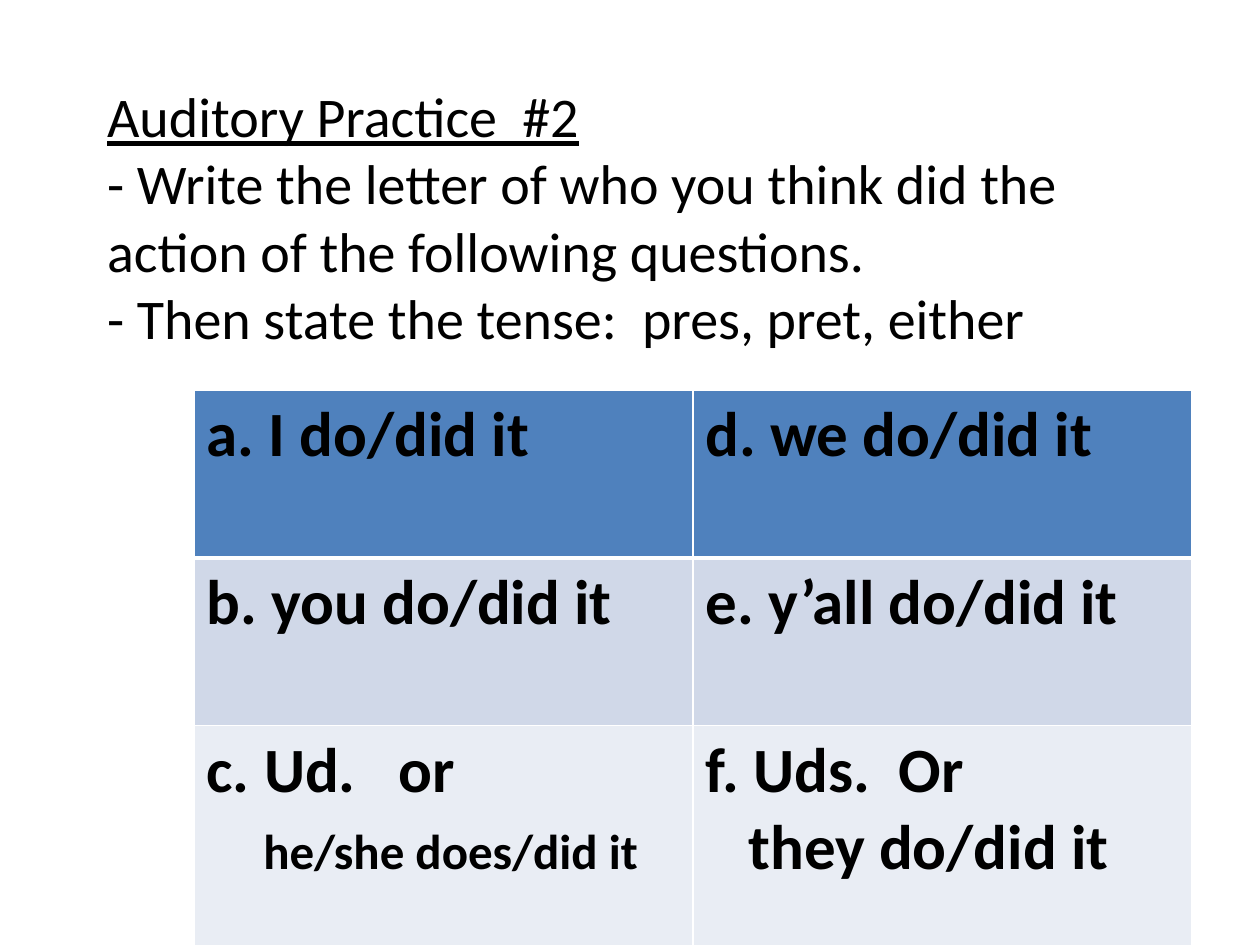
from lxml import etree
from pptx import Presentation
from pptx.dml.color import RGBColor
from pptx.enum.text import MSO_ANCHOR, MSO_AUTO_SIZE, PP_ALIGN
from pptx.oxml.ns import qn
from pptx.util import Inches, Pt

MIDDLE = MSO_ANCHOR.MIDDLE
LEFT = PP_ALIGN.LEFT
NO_FIT = MSO_AUTO_SIZE.NONE
FONT = "Calibri"
COLORS = {"text": "000000", "line": "FFFFFF", "head": "4F81BD",
          "band": "D0D8E8", "pale": "E9EDF4"}

TITLE = [
    "Auditory Practice  #2",
    "- Write the letter of who you think did the action of the following questions.",
    "- Then state the tense:  pres, pret, either",
]
# Each row: fill, height, cells; each cell line: text, size, indent
ROWS = [
    ("head", 1.33, [[("a. I do/did it", 36, 0)],
                    [("d. we do/did it", 36, 0)]]),
    ("band", 1.33, [[("b. you do/did it", 36, 0)],
                    [("e. y’all do/did it", 36, 0)]]),
    ("pale", 1.84, [[("c. Ud.   or", 36, 0), ("he/she does/did it", 28, 0.45)],
                    [("f. Uds.  Or", 36, 0), ("they do/did it", 36, 0.34)]]),
]
COL = 3.96


def style(para, size, bold=False):
    para.alignment = LEFT
    for run in para.runs:
        font = run.font
        font.name, font.size, font.bold = FONT, Pt(size), bold
        font.color.rgb = RGBColor.from_string(COLORS["text"])


def border(cell, sides):
    """Draw cell borders; sides maps a tag to a width in points."""
    props = cell._tc.get_or_add_tcPr()
    for i, (tag, width) in enumerate(sides.items()):
        line = etree.Element(qn("a:" + tag), w=str(Pt(width)))
        fill = etree.SubElement(line, qn("a:solidFill"))
        etree.SubElement(fill, qn("a:srgbClr"), val=COLORS["line"])
        props.insert(i, line)


def fill_cell(cell, lines, color):
    cell.fill.solid()
    cell.fill.fore_color.rgb = RGBColor.from_string(COLORS[color])
    frame = cell.text_frame
    frame.text = "\n".join(text for text, _, _ in lines)
    for para, (_, size, indent) in zip(frame.paragraphs, lines):
        style(para, size, True)
        if indent:
            para._p.get_or_add_pPr().set("marL", str(Inches(indent)))
        if size < 36:
            para.space_before = Pt(36 - size)


def main():
    prs = Presentation()
    prs.slide_width, prs.slide_height = Inches(10), Inches(7.5)
    slide = prs.slides.add_slide(prs.slide_layouts[5])

    # Title with instructions
    title = slide.shapes.title
    title.left, title.top = Inches(0.75), Inches(0.46)
    title.width, title.height = Inches(8.7), Inches(2.51)
    frame = title.text_frame
    frame.text = "\n".join(TITLE)
    frame.word_wrap, frame.auto_size = True, NO_FIT
    frame.vertical_anchor = MIDDLE
    for para in frame.paragraphs:
        style(para, 32)
    frame.paragraphs[0].runs[0].font.underline = True

    # Answer table
    high = sum(row[1] for row in ROWS)
    table = slide.shapes.add_table(len(ROWS), 2, Inches(1.54), Inches(3.1),
                                   Inches(2 * COL), Inches(high)).table
    for r, (color, height, cells) in enumerate(ROWS):
        table.rows[r].height = Inches(height)
        for c, lines in enumerate(cells):
            cell = table.cell(r, c)
            fill_cell(cell, lines, color)
            border(cell, {"lnL": 1, "lnR": 1, "lnT": 3 if r == 1 else 1,
                          "lnB": 3 if r == 0 else 1})

    prs.save("out.pptx")


if __name__ == "__main__":
    main()
